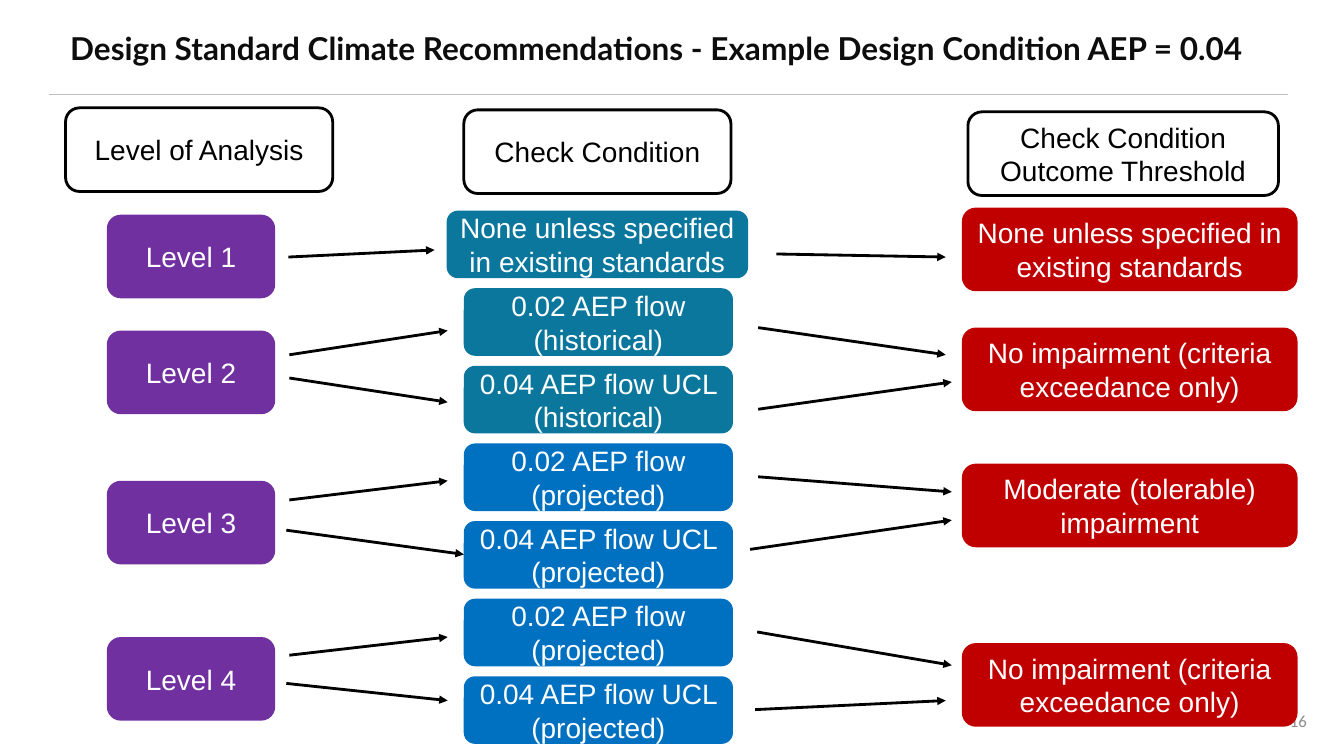
from dataclasses import dataclass
from itertools import count

from lxml.etree import SubElement
from pptx import Presentation
from pptx.dml.color import RGBColor
from pptx.enum.shapes import MSO_CONNECTOR, MSO_SHAPE
from pptx.enum.text import MSO_ANCHOR, PP_ALIGN
from pptx.oxml.ns import qn
from pptx.util import Inches, Pt


@dataclass(frozen=True)
class Theme:
    ink: str = "000000"
    paper: str = "FFFFFF"
    title: str = "0D0D0D"
    rule: str = "BCBEC0"
    page_number: str = "8C8C8C"
    level: str = "7030A0"
    historical: str = "0C779D"
    projected: str = "0070C0"
    outcome: str = "C00000"
    title_size: float = 22.5
    body_size: float = 20
    page_size: float = 12
    line_width: float = 2
    rule_width: float = 0.5
    title_font: str = "Lato"
    body_font: str = "Arial"
    page_font: str = "Calibri"


@dataclass(frozen=True)
class Box:
    left: float
    top: float
    width: float
    height: float


@dataclass(frozen=True)
class Arrow:
    x1: float
    y1: float
    x2: float
    y2: float


@dataclass(frozen=True)
class Level:
    name: str
    top: float
    checks: tuple[str, ...]
    check_fill: str
    outcome: str
    outcome_top: float
    arrows: tuple[Arrow, ...]


THEME = Theme()
TALL = 0.83
CHECK_HEIGHT = 0.67
CHECK_TOP = 2.09
CHECK_PITCH = 0.77
UNSPECIFIED = "None unless specified in existing standards"
NO_IMPAIRMENT = "No impairment (criteria exceedance only)"
PROJECTED_CHECKS = ("0.02 AEP flow (projected)", "0.04 AEP flow UCL (projected)")

HEADINGS = (
    ("Level of Analysis", Box(0.65, 1.07, 2.65, TALL)),
    ("Check Condition", Box(4.6, 1.09, 2.65, TALL)),
    ("Check Condition Outcome Threshold", Box(9.6, 1.11, 3.08, TALL)),
)

LEVELS = (
    Level("Level 1", 2.13, (UNSPECIFIED,), THEME.historical, UNSPECIFIED, 2.06,
          (Arrow(2.86, 2.55, 4.31, 2.48), Arrow(7.7, 2.52, 9.38, 2.55))),
    Level("Level 2", 3.28,
          ("0.02 AEP flow (historical)", "0.04 AEP flow UCL (historical)"),
          THEME.historical, NO_IMPAIRMENT, 3.25,
          (Arrow(2.87, 3.52, 4.44, 3.28), Arrow(2.87, 3.75, 4.44, 3.99),
           Arrow(7.52, 3.25, 9.38, 3.52), Arrow(7.52, 4.06, 9.44, 3.79))),
    Level("Level 3", 4.77, PROJECTED_CHECKS, THEME.projected,
          "Moderate (tolerable) impairment", 4.6,
          (Arrow(2.87, 4.96, 4.44, 4.77), Arrow(2.84, 5.26, 4.6, 5.5),
           Arrow(7.52, 4.73, 9.44, 4.88), Arrow(7.44, 5.45, 9.44, 5.16))),
    Level("Level 4", 6.32, PROJECTED_CHECKS, THEME.projected, NO_IMPAIRMENT, 6.38,
          (Arrow(2.87, 6.5, 4.44, 6.32), Arrow(2.84, 6.78, 4.44, 6.95),
           Arrow(7.51, 6.27, 9.44, 6.6), Arrow(7.49, 7.04, 9.38, 6.95))),
)


def write(frame, text: str, *, color: str, size: float = THEME.body_size,
          font: str = THEME.body_font, bold: bool = False,
          align: PP_ALIGN = PP_ALIGN.CENTER,
          anchor: MSO_ANCHOR = MSO_ANCHOR.MIDDLE) -> None:
    frame.word_wrap = True
    frame.vertical_anchor = anchor
    paragraph = frame.paragraphs[0]
    paragraph.alignment = align
    run = paragraph.add_run()
    run.text = text
    run.font.name = font
    run.font.size = Pt(size)
    run.font.bold = bold
    run.font.color.rgb = RGBColor.from_string(color)


def place(box: Box) -> tuple[Inches, ...]:
    return tuple(Inches(n) for n in (box.left, box.top, box.width, box.height))


def add_label(slide, text: str, box: Box, **text_format) -> None:
    write(slide.shapes.add_textbox(*place(box)).text_frame, text, **text_format)


def add_card(slide, text: str, box: Box, fill: str, *,
             color: str = THEME.paper, outline: str | None = None) -> None:
    card = slide.shapes.add_shape(MSO_SHAPE.ROUNDED_RECTANGLE, *place(box))
    card.shadow.inherit = False
    card.fill.solid()
    card.fill.fore_color.rgb = RGBColor.from_string(fill)
    if outline:
        card.line.color.rgb = RGBColor.from_string(outline)
        card.line.width = Pt(THEME.line_width)
    else:
        card.line.fill.background()
    write(card.text_frame, text, color=color)


def add_line(slide, ends: Arrow, *, color: str = THEME.ink,
             width: float = THEME.line_width, head: bool = True) -> None:
    line = slide.shapes.add_connector(
        MSO_CONNECTOR.STRAIGHT,
        *(Inches(n) for n in (ends.x1, ends.y1, ends.x2, ends.y2)))
    line.line.color.rgb = RGBColor.from_string(color)
    line.line.width = Pt(width)
    if head:
        SubElement(line.line._get_or_add_ln(), qn("a:tailEnd"), type="triangle")
    SubElement(line._element.spPr, qn("a:effectLst"))


def add_levels(slide) -> None:
    rows = count()
    for level in LEVELS:
        add_card(slide, level.name, Box(1.06, level.top, 1.67, TALL), THEME.level)
        add_card(slide, level.outcome, Box(9.54, level.outcome_top, 3.33, TALL),
                 THEME.outcome)
        for check in level.checks:
            left, width = (4.43, 2.99) if check == UNSPECIFIED else (4.6, 2.67)
            top = CHECK_TOP + CHECK_PITCH * next(rows)
            add_card(slide, check, Box(left, top, width, CHECK_HEIGHT),
                     level.check_fill)
        for arrow in level.arrows:
            add_line(slide, arrow)


def main() -> None:
    deck = Presentation()
    deck.slide_width, deck.slide_height = Inches(13.33), Inches(7.5)
    slide = deck.slides.add_slide(deck.slide_layouts[6])

    add_line(slide, Arrow(0.49, 0.94, 12.77, 0.94), color=THEME.rule,
             width=THEME.rule_width, head=False)
    add_label(slide,
              "Design Standard Climate Recommendations - Example Design Condition AEP = 0.04",
              Box(0.49, 0.24, 12.05, 0.83), color=THEME.title, bold=True,
              size=THEME.title_size, font=THEME.title_font, anchor=MSO_ANCHOR.TOP)
    add_label(slide, "16", Box(10.42, 6.95, 2.64, 0.4), color=THEME.page_number,
              size=THEME.page_size, font=THEME.page_font, align=PP_ALIGN.RIGHT)
    for heading, box in HEADINGS:
        add_card(slide, heading, box, THEME.paper, color=THEME.ink, outline=THEME.ink)
    add_levels(slide)
    deck.save("out.pptx")


if __name__ == "__main__":
    main()
